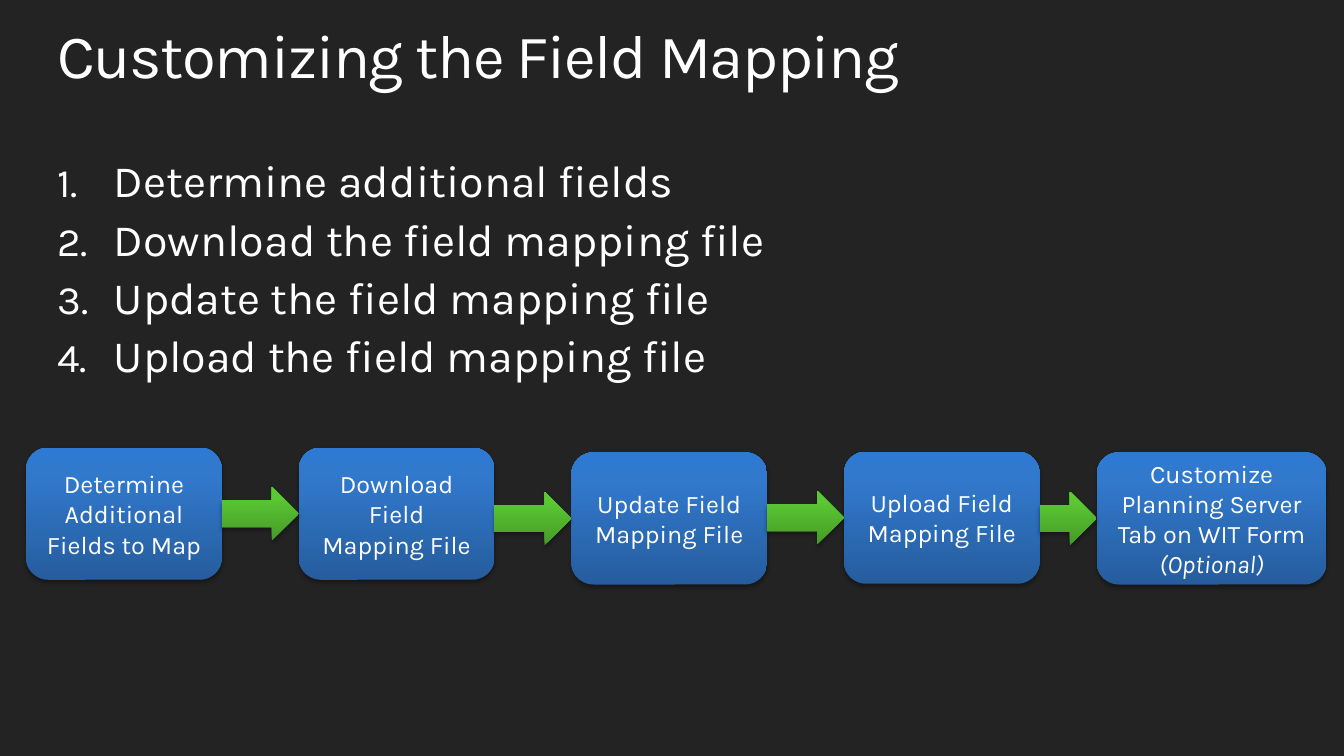
from itertools import pairwise

from lxml.etree import SubElement
from pptx import Presentation
from pptx.dml.color import RGBColor
from pptx.enum.shapes import MSO_SHAPE as Shape
from pptx.enum.text import MSO_ANCHOR as Anchor, MSO_AUTO_SIZE as AutoSize, PP_ALIGN as Align
from pptx.oxml.ns import qn
from pptx.util import Cm, Pt

BLUE = ((0, "265D9E"), (80, "3179CD"), (100, "2E79D1"))
GREEN = ((0, "459927"), (80, "5AC733"), (100, "59CB30"))


def color(value):
    return RGBColor.from_string(value)


def add_node(parent, tag, **attributes):
    return SubElement(parent, qn(tag), {name: str(value) for name, value in attributes.items()})


class FlowSlide:
    font = "Karla"
    ink = "FFFFFF"
    ground = "232323"

    def __init__(self, deck):
        self.slide = deck.slides.add_slide(deck.slide_layouts[5])
        fill = self.slide.background.fill
        fill.solid()
        fill.fore_color.rgb = color(self.ground)

    def style(self, paragraph, size):
        for run in paragraph.runs:
            run.font.name = self.font
            run.font.size = Pt(size)
            run.font.color.rgb = color(self.ink)

    def plain_frame(self, frame):
        frame.word_wrap = True
        frame.auto_size = AutoSize.NONE
        frame.vertical_anchor = Anchor.TOP
        frame.margin_left = frame.margin_right = frame.margin_top = frame.margin_bottom = 0

    def title(self, text, left, top, width, height):
        heading = self.slide.shapes.title
        heading.left, heading.top = Cm(left), Cm(top)
        heading.width, heading.height = Cm(width), Cm(height)
        frame = heading.text_frame
        self.plain_frame(frame)
        frame.text = text
        paragraph = frame.paragraphs[0]
        paragraph.alignment = Align.LEFT
        paragraph.line_spacing = 0.9
        self.style(paragraph, 44)
        paragraph.runs[0].font._element.set("spc", "-100")

    def numbered_list(self, items, left, top, width, height):
        box = self.slide.shapes.add_textbox(Cm(left), Cm(top), Cm(width), Cm(height))
        frame = box.text_frame
        self.plain_frame(frame)
        frame.text = "\n".join(items)
        for index, paragraph in enumerate(frame.paragraphs):
            properties = paragraph._p.get_or_add_pPr()
            properties.set("marL", str(Cm(1.42)))
            properties.set("indent", str(-Cm(1.42)))
            add_node(properties, "a:buSzPct", val=90000)
            add_node(properties, "a:buFont", typeface=self.font)
            add_node(properties, "a:buAutoNum", type="arabicPeriod")
            paragraph.line_spacing = 0.9
            paragraph.space_before = Pt(7 if index else 0)
            self.style(paragraph, 32)

    def glossy(self, kind, stops, left, top, width, height):
        shape = self.slide.shapes.add_shape(kind, left, top, width, height)
        shape.fill.gradient()
        shape.fill.gradient_angle = 90
        stop_list = shape._element.spPr.find(qn("a:gradFill")).find(qn("a:gsLst"))
        stop_list.clear()
        for position, value in stops:
            stop = add_node(stop_list, "a:gs", pos=position * 1000)
            add_node(stop, "a:srgbClr", val=value)
        shape.line.fill.background()
        shape.shadow.inherit = False
        effects = shape._element.spPr.find(qn("a:effectLst"))
        shadow = add_node(effects, "a:outerShdw", blurRad=Pt(3.1), dist=Pt(1.8),
                          dir=5400000, rotWithShape=0)
        add_node(add_node(shadow, "a:srgbClr", val="000000"), "a:alpha", val=35000)
        return shape

    def step(self, text, left, top, width):
        box = self.glossy(Shape.ROUNDED_RECTANGLE, BLUE, Cm(left), Cm(top), Cm(width), Cm(3.33))
        frame = box.text_frame
        frame.word_wrap = True
        frame.vertical_anchor = Anchor.MIDDLE
        frame.text = text
        for paragraph in frame.paragraphs:
            paragraph.alignment = Align.CENTER
            self.style(paragraph, 18)
        return box

    def arrow(self, before, after):
        left = before.left + before.width
        height = Cm(1.35)
        top = after.top + (after.height - height) // 2
        self.glossy(Shape.RIGHT_ARROW, GREEN, left, top, after.left - left, height)


def main():
    deck = Presentation()
    deck.slide_width, deck.slide_height = Cm(33.87), Cm(19.05)
    mapping = FlowSlide(deck)
    mapping.title("Customizing the Field Mapping", 1.45, 0.64, 30.96, 1.7)
    mapping.numbered_list(
        ["Determine additional fields", "Download the field mapping file",
         "Update the field mapping file", "Upload the field mapping file"],
        1.45, 4.01, 30.96, 7.24)
    steps = [mapping.step(text, 0.66 + 6.87 * index, top, 4.93)
             for index, (text, top) in enumerate([
                 ("Determine Additional Fields to Map", 11.28),
                 ("Download Field Mapping File", 11.28),
                 ("Update Field Mapping File", 11.4),
                 ("Upload Field Mapping File", 11.38)])]
    customize = mapping.step("Customize Planning Server Tab on WIT Form\n(Optional)", 27.64, 11.4, 5.79)
    customize.text_frame.paragraphs[1].runs[0].font.italic = True
    for before, after in pairwise([*steps, customize]):
        mapping.arrow(before, after)
    deck.save("out.pptx")


if __name__ == "__main__":
    main()
